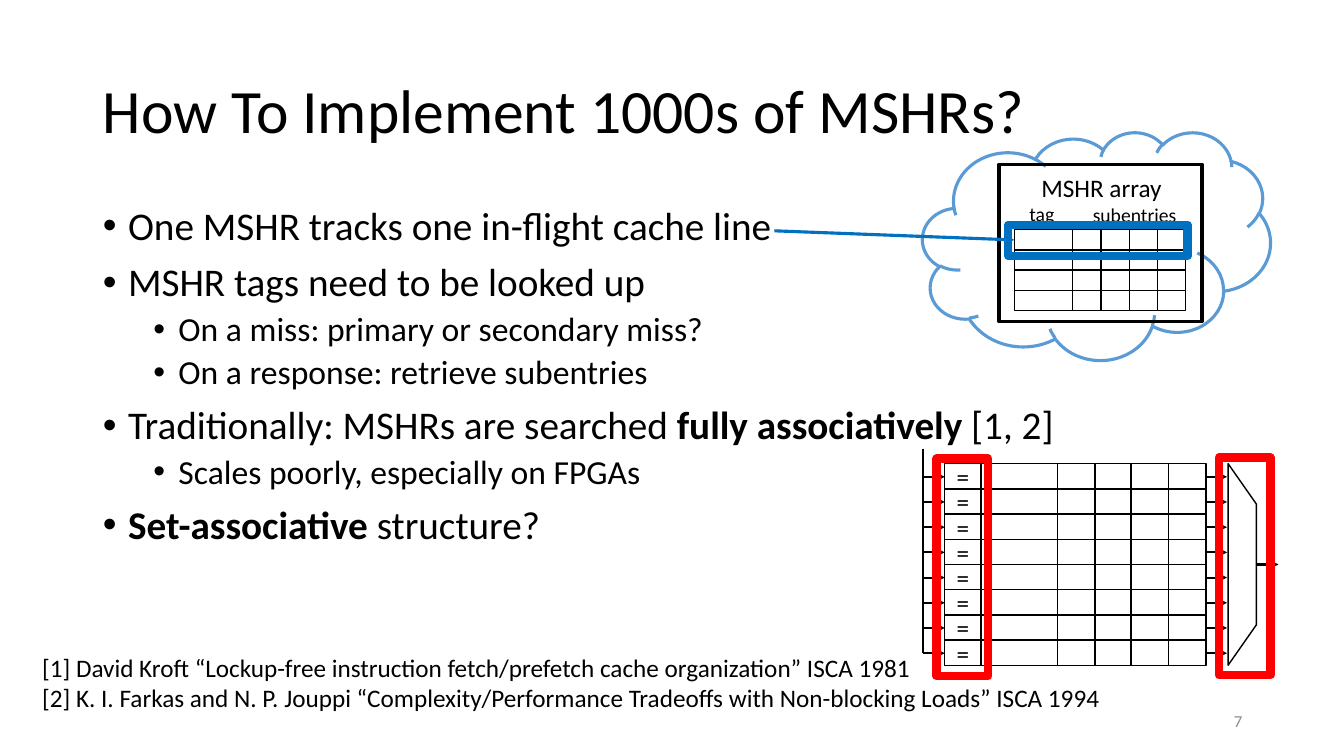
from lxml import etree
from pptx import Presentation, util as u
from pptx.dml import color
from pptx.enum import shapes, text
from pptx.oxml import ns

PX = 9144  # EMU per px, 100 px to the inch
COLORS = {"ink": "000000", "paper": "FFFFFF", "gray": "8C8C8C",
          "cloud": "5B9BD5", "mark": "0070C0", "alert": "FF0000"}
RECT = shapes.MSO_SHAPE.RECTANGLE

BULLETS = [
    (0, [("One MSHR tracks one in-flight cache line", False)]),
    (0, [("MSHR tags need to be looked up", False)]),
    (1, [("On a miss: primary or secondary miss?", False)]),
    (1, [("On a response: retrieve subentries", False)]),
    (0, [("Traditionally: MSHRs are searched ", False),
         ("fully associatively", True), (" [1, 2]", False)]),
    (1, [("Scales poorly, especially on FPGAs", False)]),
    (0, [("Set-associative", True), (" structure?", False)]),
]
LEVELS = [{"size": 28, "before": 10, "indent": 25},
          {"size": 24, "before": 5, "indent": 75}]
REFERENCES = [
    "[1] David Kroft “Lockup-free instruction fetch/prefetch cache organization” ISCA 1981",
    "[2] K. I. Farkas and N. P. Jouppi “Complexity/Performance Tradeoffs with "
    "Non-blocking Loads” ISCA 1994",
]


def rgb(name):
    return color.RGBColor.from_string(COLORS[name])


def assign(target, values):
    for name, value in values.items():
        setattr(target, name, value)


class SlideBuilder:
    font = "Calibri"

    def __init__(self, deck):
        self.page = deck.slides.add_slide(deck.slide_layouts[1])
        self.shapes = self.page.shapes

    def start_group(self):
        self.shapes = self.page.shapes.add_group_shape().shapes

    def end_group(self):
        self.shapes = self.page.shapes

    def place(self, box, bounds):
        names = ("left", "top", "width", "height")
        assign(box, {name: value * PX for name, value in zip(names, bounds)})

    def span(self, para, words, size, ink="ink", bold=False):
        run = para.add_run()
        run.text = words
        assign(run.font, {"name": self.font, "size": u.Pt(size), "bold": bold})
        run.font.color.rgb = rgb(ink)

    def title(self, words, bounds):
        box = self.page.shapes.title
        self.place(box, bounds)
        assign(box.text_frame, {"vertical_anchor": text.MSO_ANCHOR.MIDDLE,
                                "auto_size": text.MSO_AUTO_SIZE.NONE})
        para = box.text_frame.paragraphs[0]
        assign(para, {"alignment": text.PP_ALIGN.LEFT, "line_spacing": 0.9})
        self.span(para, words, 44)

    def bullets(self, items, bounds):
        box = self.page.placeholders[1]
        self.place(box, bounds)
        frame = box.text_frame
        frame.auto_size = text.MSO_AUTO_SIZE.NONE
        for index, (level, spans) in enumerate(items):
            para = frame.add_paragraph() if index else frame.paragraphs[0]
            style = LEVELS[level]
            assign(para, {"level": level, "line_spacing": 0.9,
                          "space_before": u.Pt(style["before"]),
                          "space_after": u.Pt(0)})
            props = para._p.get_or_add_pPr()
            props.set("marL", str(style["indent"] * PX))
            props.set("indent", str(-25 * PX))
            etree.SubElement(props, ns.qn("a:buFont")).set("typeface", "Arial")
            etree.SubElement(props, ns.qn("a:buChar")).set("char", "•")
            for words, bold in spans:
                self.span(para, words, style["size"], bold=bold)

    def label(self, lines, bounds, size=18, ink="ink", align=text.PP_ALIGN.LEFT,
              anchor=text.MSO_ANCHOR.TOP, wrap=False):
        box = self.shapes.add_textbox(*(value * PX for value in bounds))
        frame = box.text_frame
        fit = text.MSO_AUTO_SIZE.NONE if wrap else text.MSO_AUTO_SIZE.SHAPE_TO_FIT_TEXT
        assign(frame, {"word_wrap": wrap, "vertical_anchor": anchor, "auto_size": fit})
        for index, words in enumerate(lines):
            para = frame.add_paragraph() if index else frame.paragraphs[0]
            para.alignment = align
            self.span(para, words, size, ink)

    def shape(self, kind, bounds, fill="paper", line="ink", weight=1):
        box = self.shapes.add_shape(kind, *(value * PX for value in bounds))
        box.shadow.inherit = False
        if fill:
            box.fill.solid()
            box.fill.fore_color.rgb = rgb(fill)
        else:
            box.fill.background()
        box.line.color.rgb = rgb(line)
        box.line.width = u.Pt(weight)
        return box

    def line(self, start, end, ink="ink", weight=1.5, arrow=True):
        link = self.shapes.add_connector(
            shapes.MSO_CONNECTOR.STRAIGHT, *(value * PX for value in start + end))
        link.line.color.rgb = rgb(ink)
        link.line.width = u.Pt(weight)
        if arrow:
            outline = link.line._get_or_add_ln()
            etree.SubElement(outline, ns.qn("a:tailEnd")).set("type", "triangle")
        etree.SubElement(link._element.spPr, ns.qn("a:effectLst"))

    def row(self, left, top, widths, height):
        for width in widths:
            self.shape(RECT, (left, top, width, height))
            left += width


def draw_associative_lookup(slide):
    """Comparators beside each entry, feeding a multiplexer."""
    slide.start_group()
    for index in range(8):
        top = 460 + 25 * index
        slide.row(937, top, (36, 76, 37, 36, 37, 37), 25)
        slide.label(["="], (939, top - 7, 33, 40))
    for index in range(8):
        middle = 473 + 25 * index
        for left, right in ((915, 937), (1196, 1217)):
            slide.line((left, middle), (right, middle))
    slide.line((915, 445), (915, 648), arrow=False)
    mux = slide.shape(shapes.MSO_SHAPE.FLOWCHART_MANUAL_OPERATION, (1132, 546, 200, 28))
    mux.rotation = 270
    mux._element.spPr.xfrm.set("flipH", "1")
    slide.line((1246, 560), (1268, 560))
    slide.end_group()
    for left, top in ((929, 455), (1209, 454)):
        slide.shape(RECT, (left, top, 51, 216), None, "alert", 6)


def draw_mshr_array(slide):
    slide.shape(shapes.MSO_SHAPE.CLOUD, (915, 131, 345, 226), "paper", "cloud", 2.25)
    slide.start_group()
    slide.label(["MSHR array"], (1023, 166, 141, 40))
    for index in range(4):
        slide.row(1006, 228 + 20 * index, (58, 28, 28, 28, 28), 20)
    slide.label(["tag"], (1011, 195, 45, 34), 14)
    slide.label(["subentries"], (1074, 196, 104, 34), 14)
    slide.shape(RECT, (991, 163, 201, 156), None, weight=2.5)
    slide.end_group()
    slide.line((768, 229), (1006, 238), "mark", 2.25)
    slide.shape(RECT, (1000, 223, 178, 31), None, "mark", 6)


def main():
    deck = Presentation()
    assign(deck, {"slide_width": u.Inches(13.33), "slide_height": u.Inches(7.5)})
    slide = SlideBuilder(deck)
    slide.title("How To Implement 1000s of MSHRs?", (92, 40, 1150, 145))
    slide.bullets(BULLETS, (92, 200, 1150, 476))
    slide.label(["7"], (942, 695, 300, 40), 12, "gray", text.PP_ALIGN.RIGHT,
                text.MSO_ANCHOR.MIDDLE, wrap=True)
    slide.label(REFERENCES, (32, 642, 1124, 71))
    draw_associative_lookup(slide)
    draw_mshr_array(slide)
    deck.save("out.pptx")


if __name__ == "__main__":
    main()
